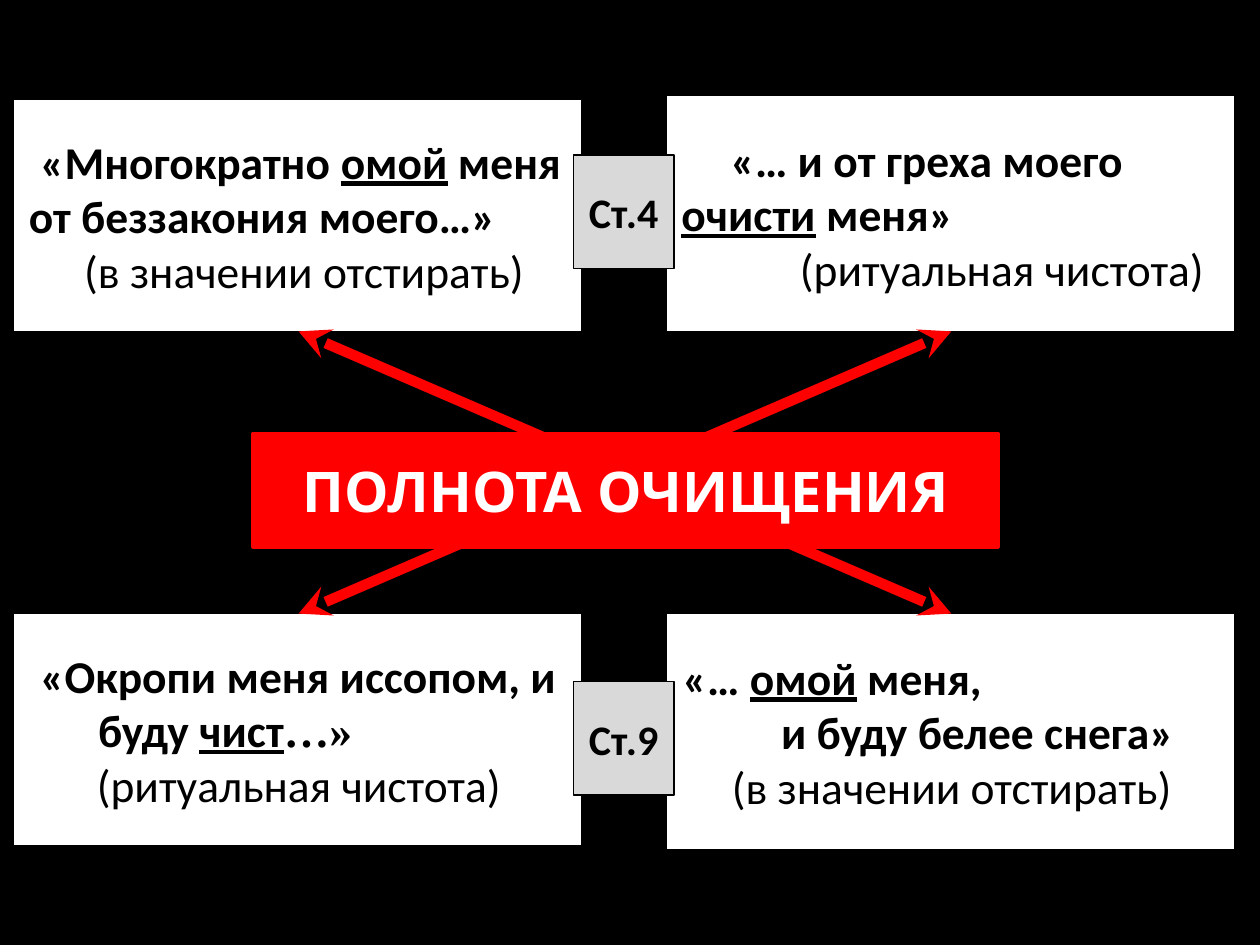
"""Build a slide with four verse cards around a central heading."""
from lxml.etree import SubElement
from pptx import Presentation
from pptx.dml.color import RGBColor as RGB
from pptx.enum.shapes import MSO_CONNECTOR as Link, MSO_SHAPE as Form
from pptx.enum.text import MSO_ANCHOR as Anchor, MSO_AUTO_SIZE as Fit, PP_ALIGN as Align
from pptx.oxml.ns import qn
from pptx.util import Inches, Pt

BLACK = RGB(0x00, 0x00, 0x00)
WHITE = RGB(0xFF, 0xFF, 0xFF)
GREY = RGB(0xD9, 0xD9, 0xD9)
RED = RGB(0xFF, 0x00, 0x00)

UNDER = {"under": True}
PLAIN = {"bold": False}
TIMES = {"font": "Times New Roman"}

LEFT, RIGHT = 0.11, 5.29
WIDE = 4.51
CARDS = [
    ((LEFT, 0.79, WIDE, 1.84), [
        (0.11, [("«Многократно ", {}), ("омой", UNDER), (" меня", {})]),
        (0.02, [("от беззакония моего…»", {})]),
        (0.46, [("(в значении отстирать)", PLAIN)])]),
    ((RIGHT, 0.76, WIDE, 1.87), [
        (0.41, [("«… и от греха моего", {})]),
        (0.02, [("очисти", UNDER), (" меня»", {})]),
        (0.96, [("(ритуальная чистота)", PLAIN)])]),
    ((LEFT, 4.87, WIDE, 1.84), [
        (0.11, [("«Окропи меня иссопом, и", {})]),
        (0.57, [("буду ", {}), ("чист", UNDER), ("…»", TIMES)]),
        (0.56, [("(ритуальная чистота)", PLAIN)])]),
    ((RIGHT, 4.87, WIDE, 1.87), [
        (0.03, [("«… ", {}), ("омой", UNDER), (" меня,", {})]),
        (0.81, [("и буду белее снега»", {})]),
        (0.42, [("(в значении отстирать)", PLAIN)])]),
]
TAGS = [("Ст.4", 1.23), ("Ст.9", 5.41)]


def write(par, text, size=26, font="Calibri", color=BLACK, bold=True, under=False):
    run = par.add_run()
    run.text = text
    style = run.font
    style.size, style.name = Pt(size), font
    style.bold, style.underline = bold, under
    style.color.rgb = color


class Board:
    def __init__(self, deck):
        self.slide = deck.slides.add_slide(deck.slide_layouts[5])
        self.shapes = self.slide.shapes
        back = self.slide.background.fill
        back.solid()
        back.fore_color.rgb = BLACK

    def paint(self, shape, fill, edge, width):
        shape.fill.solid()
        shape.fill.fore_color.rgb = fill
        shape.line.color.rgb = edge
        shape.line.width = Pt(width)
        frame = shape.text_frame
        frame.word_wrap = True
        frame.auto_size = Fit.NONE
        frame.vertical_anchor = Anchor.MIDDLE
        return frame

    def box(self, area, fill):
        shape = self.shapes.add_shape(Form.RECTANGLE, *map(Inches, area))
        shape.shadow.inherit = False
        return self.paint(shape, fill, BLACK, 0.75)

    def card(self, area, lines):
        frame = self.box(area, WHITE)
        for num, (indent, runs) in enumerate(lines):
            par = frame.add_paragraph() if num else frame.paragraphs[0]
            par.alignment = Align.LEFT
            par._p.get_or_add_pPr().set("marL", str(Inches(indent)))
            for text, style in runs:
                write(par, text, **style)

    def tag(self, text, top):
        par = self.box((4.55, top, 0.8, 0.9), GREY).paragraphs[0]
        par.alignment = Align.CENTER
        write(par, text, size=24)

    def arrow(self, start, end):
        line = self.shapes.add_connector(Link.STRAIGHT, *map(Inches, start + end))
        line.line.color.rgb = RED
        line.line.width = Pt(6)
        for name in ("a:headEnd", "a:tailEnd"):
            SubElement(line.line._get_or_add_ln(), qn(name), type="stealth")
        SubElement(line._element.spPr, qn("a:effectLst"))

    def title(self, text, area):
        shape = self.shapes.title
        shape.left, shape.top, shape.width, shape.height = map(Inches, area)
        par = self.paint(shape, RED, RED, 2).paragraphs[0]
        par.alignment = Align.CENTER
        write(par, text, size=32, font="Quicksand", color=WHITE)
        self.shapes._spTree.append(shape._element)


def main():
    deck = Presentation()
    deck.slide_width, deck.slide_height = Inches(10), Inches(7.5)
    board = Board(deck)
    for area, lines in CARDS:
        board.card(area, lines)
    for text, top in TAGS:
        board.tag(text, top)
    high, low = 2.63, 4.87
    board.arrow((2.37, high), (7.55, low))
    board.arrow((2.37, low), (7.55, high))
    board.title("ПОЛНОТА ОЧИЩЕНИЯ", (2.01, 3.44, 5.91, 0.9))
    deck.save("out.pptx")


if __name__ == "__main__":
    main()
